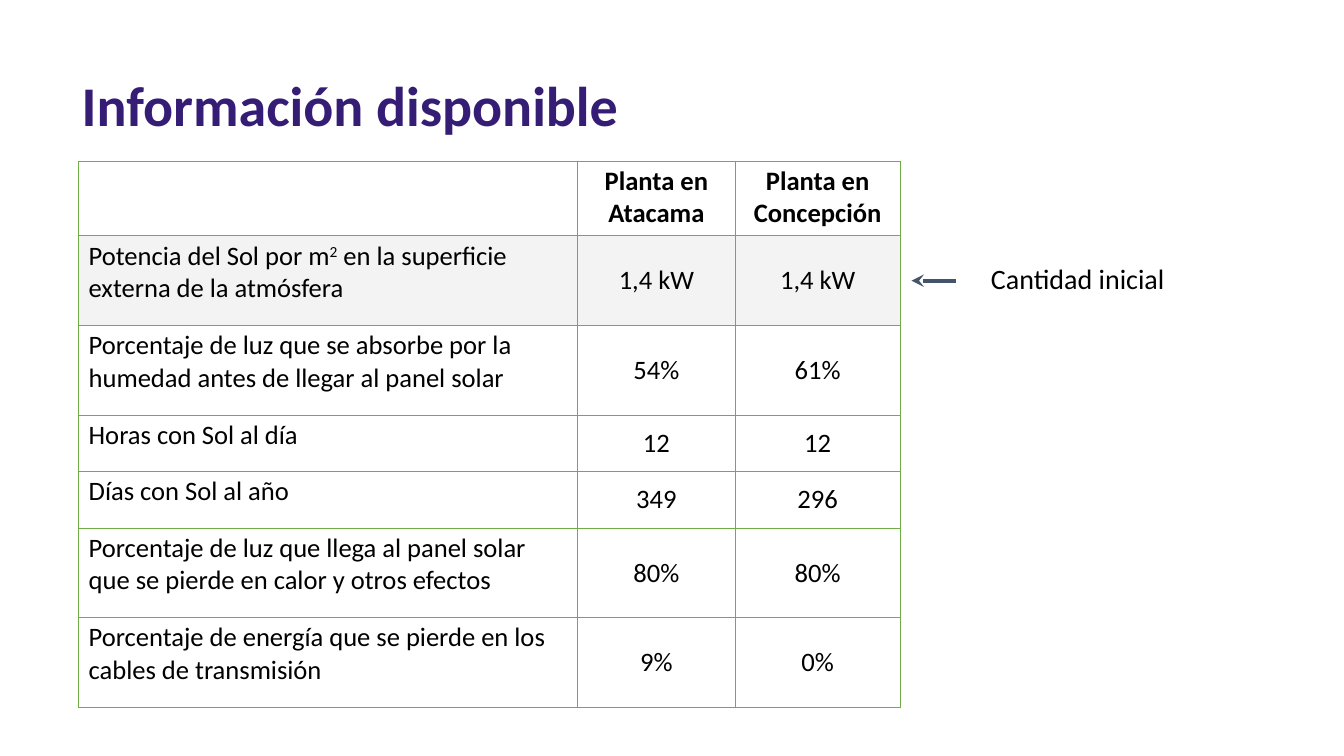
"""Build the slide comparing the available data of two solar plants."""
from lxml.etree import SubElement
from pptx import Presentation
from pptx.dml.color import RGBColor
from pptx.enum.shapes import MSO_CONNECTOR
from pptx.enum.text import MSO_ANCHOR, PP_ALIGN
from pptx.oxml.ns import qn
from pptx.util import Inches, Pt

COLORS = {"title": "351C75", "text": "000000", "border": "70AD47",
          "shade": "F3F3F3", "arrow": "44546A"}
COLS = [4.95, 1.56, 1.64]
TALL, SHORT = 0.89, 0.56
ROWS = [
    (0.74, "", "Planta en Atacama", "Planta en Concepción"),
    (TALL, "Potencia del Sol por m² en la superficie externa de la atmósfera", "1,4 kW", "1,4 kW"),
    (TALL, "Porcentaje de luz que se absorbe por la humedad antes de llegar al panel solar", "54%", "61%"),
    (SHORT, "Horas con Sol al día", "12", "12"),
    (SHORT, "Días con Sol al año", "349", "296"),
    (TALL, "Porcentaje de luz que llega al panel solar que se pierde en calor y otros efectos", "80%", "80%"),
    (TALL, "Porcentaje de energía que se pierde en los cables de transmisión", "9%", "0%"),
]
LEFT, TOP = 0.78, 1.6
ARROW_Y = TOP + ROWS[0][0] + TALL / 2


def style(r, size, color, bold=False):
    r.font.name, r.font.size, r.font.bold = "Calibri", Pt(size), bold
    r.font.color.rgb = RGBColor.from_string(COLORS[color])


def add_borders(cell):
    tcPr = cell._tc.get_or_add_tcPr()
    for i, side in enumerate(("lnL", "lnR", "lnT", "lnB")):
        ln = tcPr.makeelement(qn(f"a:{side}"), {"w": str(Pt(0.75))})
        fill = SubElement(ln, qn("a:solidFill"))
        SubElement(fill, qn("a:srgbClr"), val=COLORS["border"])
        tcPr.insert(i, ln)


prs = Presentation()
prs.slide_width, prs.slide_height = Inches(13.33), Inches(7.5)
s = prs.slides.add_slide(prs.slide_layouts[5])

title = s.shapes.title
title.left, title.top, title.width, title.height = map(Inches, (0.71, 0.65, 8.59, 0.77))
tf = title.text_frame
tf.text = "Información disponible"
tf.vertical_anchor = MSO_ANCHOR.TOP
p = tf.paragraphs[0]
p.alignment = PP_ALIGN.LEFT
style(p.runs[0], 40, "title", True)

frame = s.shapes.add_table(len(ROWS), len(COLS), Inches(LEFT), Inches(TOP),
                           Inches(sum(COLS)), Inches(sum(row[0] for row in ROWS)))
table = frame.table
table.horz_banding = False
for col, width in zip(table.columns, COLS):
    col.width = Inches(width)
for i, (height, *texts) in enumerate(ROWS):
    table.rows[i].height = Inches(height)
    for j, text in enumerate(texts):
        cell = table.cell(i, j)
        cell.margin_left = cell.margin_right = Inches(0.1)
        cell.margin_top = cell.margin_bottom = Inches(0.04)
        cell.vertical_anchor = MSO_ANCHOR.MIDDLE if i and j else MSO_ANCHOR.TOP
        if i == 1:
            cell.fill.solid()
            cell.fill.fore_color.rgb = RGBColor.from_string(COLORS["shade"])
        else:
            cell.fill.background()
        add_borders(cell)
        p = cell.text_frame.paragraphs[0]
        p.alignment = PP_ALIGN.CENTER if j else PP_ALIGN.LEFT
        before, square, after = text.partition("²")
        for part in filter(None, (before, square, after)):
            r = p.add_run()
            r.text = part.replace("²", "2")
            style(r, 19, "text", i == 0)
            if part == "²":
                r.font._element.set("baseline", "30000")

label = s.shapes.add_textbox(Inches(9.73), Inches(2.55), Inches(3.15), Inches(0.44))
tf = label.text_frame
tf.word_wrap = True
tf.text = "Cantidad inicial"
style(tf.paragraphs[0].runs[0], 20, "text")

arrow = s.shapes.add_connector(MSO_CONNECTOR.STRAIGHT, Inches(9.48), Inches(ARROW_Y),
                               Inches(9.04), Inches(ARROW_Y))
arrow.line.width = Pt(3)
arrow.line.color.rgb = RGBColor.from_string(COLORS["arrow"])
SubElement(arrow.line._get_or_add_ln(), qn("a:tailEnd"), type="stealth")
SubElement(arrow._element.spPr, qn("a:effectLst"))

prs.save("out.pptx")
